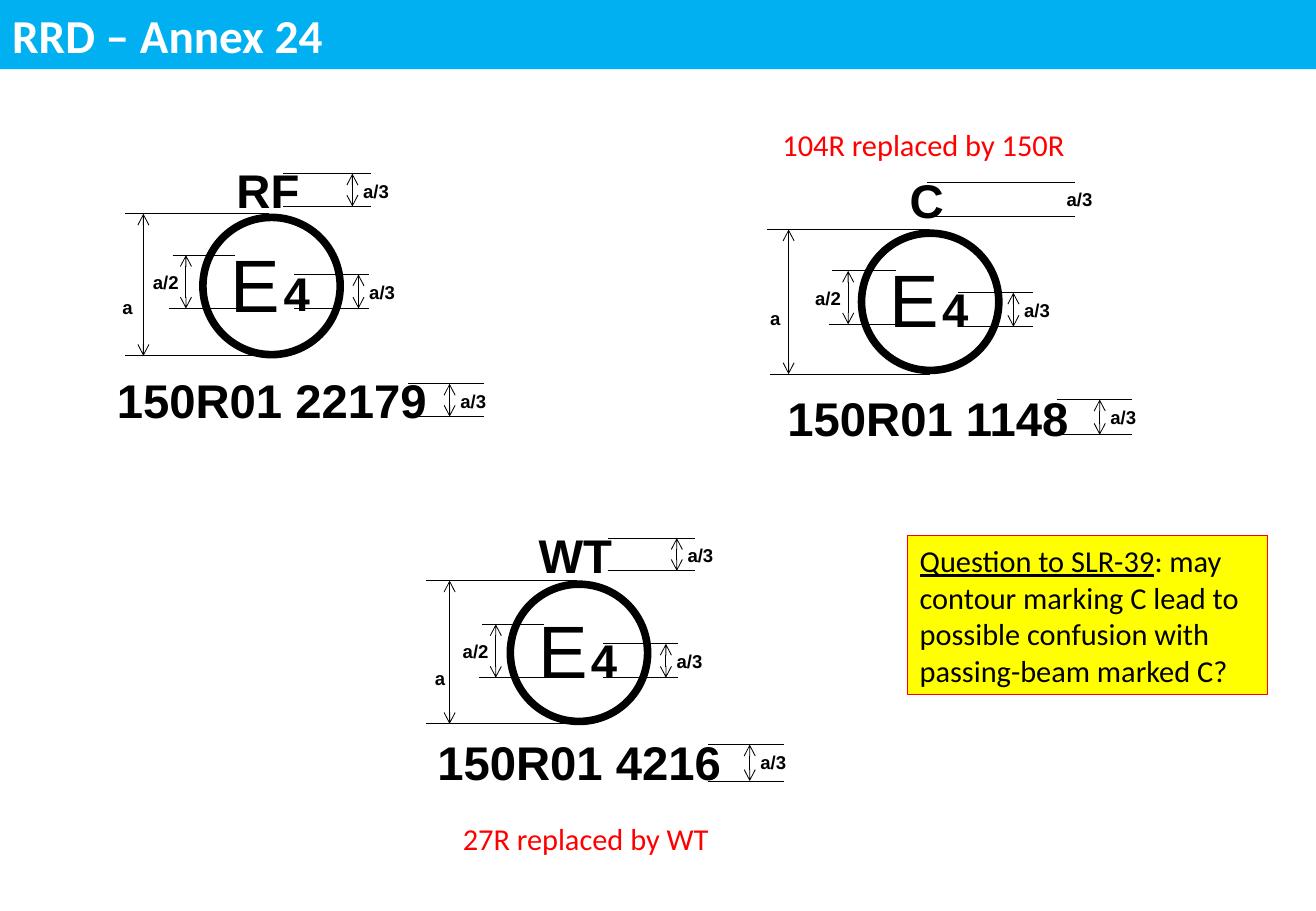
from dataclasses import dataclass
from lxml.etree import SubElement
from pptx import Presentation
from pptx.dml.color import RGBColor as RGB
from pptx.enum.shapes import MSO_CONNECTOR as CONN, MSO_SHAPE as SHAPE
from pptx.enum.text import MSO_ANCHOR as ANCHOR, MSO_AUTO_SIZE as FIT, PP_ALIGN as ALIGN
from pptx.oxml.ns import qn
from pptx.util import Inches, Pt

CELL = Inches(0.01)
COLS, ROWS = 1083, 750


@dataclass(frozen=True)
class Theme:
    ink: str = "000000"
    paper: str = "FFFFFF"
    band: str = "00B0F0"
    alert: str = "FF0000"
    note: str = "FFFF00"
    body: str = "Calibri"
    mark: str = "Arial"
    title: int = 28
    text: int = 18
    letter: int = 44
    code: int = 28
    label: int = 11
    ring: float = 4.5
    border: float = 0.75
    hair: float = 0.5


@dataclass(frozen=True)
class Dim:
    text: str
    left: int
    right: int
    top: int
    bottom: int
    arrow: int
    label: tuple
    lower: tuple = (0, 0)
    arrowed: bool = True


T = Theme()
TITLE = dict(name=T.body, size=T.title, color=T.paper, bold=True)
TEXT = dict(name=T.body, size=T.text, color=T.ink)
ALERT = dict(TEXT, color=T.alert)
LETTER = dict(name=T.mark, size=T.letter, color=T.ink)
CODE = dict(name=T.mark, size=T.code, color=T.ink, bold=True)
LABEL = dict(CODE, size=T.label)


def grid(*cells):
    return [round(c * CELL) for c in cells]


def style(font, fmt):
    values = dict(fmt, size=Pt(fmt["size"]))
    font.color.rgb = RGB.from_string(values.pop("color"))
    for key, value in values.items():
        setattr(font, key, value)


def write(sp, runs, align=ALIGN.LEFT, anchor=ANCHOR.TOP):
    tf = sp.text_frame
    for key, value in dict(word_wrap=True, auto_size=FIT.NONE, vertical_anchor=anchor).items():
        setattr(tf, key, value)
    p = tf.paragraphs[0]
    p.alignment = align
    for text, fmt in runs:
        r = p.add_run()
        r.text = text
        style(r.font, fmt)


def paint(sp, fill):
    sp.fill.solid()
    sp.fill.fore_color.rgb = RGB.from_string(fill)


def outline(sp, color, width):
    sp.line.width = Pt(width)
    sp.line.color.rgb = RGB.from_string(color)


def text_box(shapes, box, text, fmt, align=ALIGN.LEFT):
    write(shapes.add_textbox(*grid(*box)), [(text, fmt)], align)


def hairline(shapes, x1, y1, x2, y2, arrowed=False):
    c = shapes.add_connector(CONN.STRAIGHT, *grid(x1, y1, x2, y2))
    outline(c, T.ink, T.hair)
    if arrowed:
        for end in ("a:headEnd", "a:tailEnd"):
            SubElement(c.line._ln, qn(end)).set("type", "arrow")
    SubElement(c._element.spPr, qn("a:effectLst"))


def title_band(s, box):
    sp = s.shapes.title
    sp.left, sp.top, sp.width, sp.height = grid(*box)
    paint(sp, T.band)
    write(sp, [("RRD – Annex 24", TITLE)], anchor=ANCHOR.MIDDLE)


def dimension(shapes, x, y, d):
    top, bottom = y + d.top, y + d.bottom
    hairline(shapes, x + d.left, top, x + d.right, top)
    hairline(shapes, x + d.left + d.lower[0], bottom, x + d.right + d.lower[1], bottom)
    if d.arrowed:
        hairline(shapes, x + d.arrow, top, x + d.arrow, bottom, True)
    text_box(shapes, (x + d.arrow + d.label[0], top + d.label[1], 47, 29), d.text, LABEL)


def approval_mark(s, box, symbol, symbol_y, code, code_box, dims):
    x, y, w, h = box
    shapes = s.shapes.add_group_shape().shapes
    ring = shapes.add_shape(SHAPE.OVAL, *grid(*box))
    ring.shadow.inherit = False
    ring.fill.background()
    outline(ring, T.ink, T.ring)
    cx, cy, cw = code_box
    text_box(shapes, (x + 13, y + 12, 63, 84), "E", LETTER)
    text_box(shapes, (x + w / 2, y + 0.3 * h, 63, 57), "4", CODE)
    text_box(shapes, (x - 32, y + symbol_y, 171, 57), symbol, CODE, ALIGN.CENTER)
    text_box(shapes, (x + cx, y + cy, cw, 57), code, CODE, ALIGN.CENTER)
    for d in dims:
        dimension(shapes, x, y, d)


def question(s, box):
    sp = s.shapes.add_shape(SHAPE.RECTANGLE, *grid(*box))
    sp.shadow.inherit = False
    paint(sp, T.note)
    outline(sp, T.alert, T.border)
    write(sp, [
        ("Question to SLR-39", dict(TEXT, underline=True)),
        (": may contour marking C lead to possible confusion with passing-beam marked C?", TEXT),
    ], anchor=ANCHOR.MIDDLE)


THIRD, HALF, WIDER = (-1, 0), (-37, 8), (-3, 9)
MARKS = [
    ((167, 179, 113, 113), "RF", -51, "150R01 22179", (-83, 122, 279), [
        Dim("a/3", 66, 138, -36, -9, 123, THIRD),
        Dim("a/3", 75, 137, 47, 75, 128, THIRD),
        Dim("a/2", -25, 26, 31, 75, -14, HALF, WIDER),
        Dim("a/3", 169, 231, 137, 164, 203, THIRD),
        Dim("a", -64, 54, -3, 114, -49, (-27, 63), (0, 5)),
    ]),
    ((420, 481, 113, 113), "WT", -53, "150R01 4216", (-83, 118, 279), [
        Dim("a/3", 80, 152, -38, -11, 137, THIRD),
        Dim("a/3", 76, 138, 49, 77, 128, THIRD),
        Dim("a/2", -23, 28, 33, 77, -12, HALF, WIDER),
        Dim("a/3", 163, 225, 132, 162, 197, THIRD),
        Dim("a", -69, 55, -3, 115, -50, (-22, 66)),
    ]),
    ((709, 192, 113, 113), "C", -56, "150R01 1148", (-75, 124, 259), [
        Dim("a/3", 54, 176, -42, -14, 160, THIRD, arrowed=False),
        Dim("a/3", 79, 141, 49, 77, 125, THIRD),
        Dim("a/2", -24, 28, 31, 75, -11, HALF, WIDER),
        Dim("a/3", 161, 223, 137, 166, 196, THIRD),
        Dim("a", -78, 56, -3, 116, -60, (-25, 59), (3, 0)),
    ]),
]
CAPTIONS = [
    ((371, 670, 249, 40), "27R replaced by WT"),
    ((634, 99, 268, 40), "104R replaced by 150R"),
]


def main():
    prs = Presentation()
    prs.slide_width, prs.slide_height = grid(COLS, ROWS)
    s = prs.slides.add_slide(prs.slide_layouts[5])
    title_band(s, (0, 0, COLS, 57))
    for mark in MARKS:
        approval_mark(s, *mark)
    for box, text in CAPTIONS:
        text_box(s.shapes, box, text, ALERT)
    question(s, (747, 441, 296, 131))
    prs.save("out.pptx")


if __name__ == "__main__":
    main()
